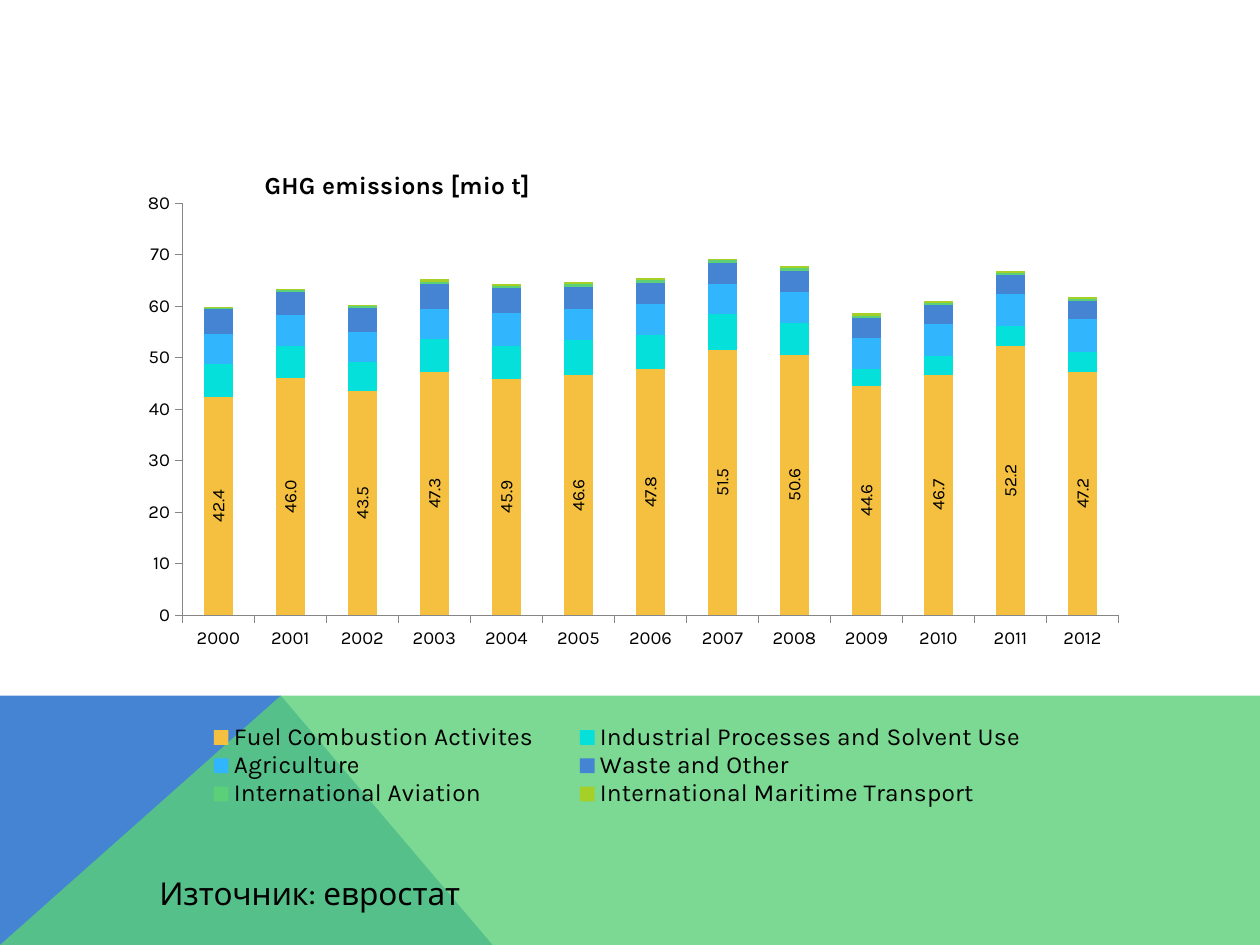
import pptx
import pptx.chart.data
import pptx.dml.color
import pptx.enum.chart
import pptx.oxml
import pptx.oxml.ns
import pptx.util
from lxml import etree

Pt = pptx.util.Pt
qn = pptx.oxml.ns.qn
FONT = "Karla"
YEARS = [str(year) for year in range(2000, 2013)]
EMISSIONS = [
    ("Fuel Combustion Activites", "F5C040",
     [42.4, 46.0, 43.5, 47.3, 45.9, 46.6, 47.8, 51.5, 50.6, 44.6, 46.7, 52.2, 47.2]),
    ("Industrial Processes and Solvent Use", "05E0DB",
     [6.3, 6.2, 5.6, 6.3, 6.3, 6.8, 6.6, 7.0, 6.1, 3.2, 3.6, 3.9, 3.9]),
    ("Agriculture", "31B6FD",
     [6.0, 6.0, 6.0, 5.8, 6.4, 6.0, 6.0, 5.8, 6.0, 6.0, 6.2, 6.2, 6.4]),
    ("Waste and Other", "4584D3",
     [4.7, 4.5, 4.5, 5.0, 5.0, 4.3, 4.1, 4.1, 4.1, 3.9, 3.7, 3.7, 3.5]),
    ("International Aviation", "5BD078",
     [0.4, 0.4, 0.4, 0.4, 0.4, 0.6, 0.6, 0.5, 0.7, 0.4, 0.5, 0.5, 0.4]),
    ("International Maritime Transport", "A5D028",
     [0.1, 0.2, 0.3, 0.4, 0.4, 0.4, 0.3, 0.3, 0.4, 0.6, 0.4, 0.3, 0.3]),
]


def color(hex_value):
    return pptx.dml.color.RGBColor.from_string(hex_value)


def style_font(font, size, bold=False):
    font.name = FONT
    font.size = Pt(size)
    font.bold = bold
    font.color.rgb = color("000000")


def add_polygon(slide, points, fill, opacity=100):
    builder = slide.shapes.build_freeform(Pt(points[0][0]), Pt(points[0][1]), scale=1.0)
    builder.add_line_segments([(Pt(x), Pt(y)) for x, y in points[1:]], close=True)
    polygon = builder.convert_to_shape()
    polygon.shadow.inherit = False
    polygon.fill.solid()
    polygon.fill.fore_color.rgb = color(fill)
    polygon.line.fill.background()
    if opacity < 100:
        fill_color = polygon.fill._xPr.find(".//" + qn("a:srgbClr"))
        etree.SubElement(fill_color, qn("a:alpha"), val=str(opacity * 1000))


def add_footer_band(slide, left, top, width, height):
    right, bottom = left + width, top + height
    peak = left + 160.5
    # Blue corner, then the translucent green slope over it
    add_polygon(slide, [(left, bottom), (left, top), (peak, top), (left + 281.5, bottom)],
                "4584D3")
    add_polygon(slide, [(left, bottom), (peak, top), (right, top), (right, bottom)],
                "5BD078", 80)


def place_part(part, x, y, width=None, height=None, inner=False):
    """Give a chart part a manual layout, as fractions of the chart."""
    for old_layout in part.findall(qn("c:layout")):
        part.remove(old_layout)
    layout = etree.Element(qn("c:layout"))
    manual = etree.SubElement(layout, qn("c:manualLayout"))
    settings = [("layoutTarget", "inner" if inner else None),
                ("xMode", "edge"), ("yMode", "edge"),
                ("x", x), ("y", y), ("w", width), ("h", height)]
    for tag, value in settings:
        if value is not None:
            etree.SubElement(manual, qn("c:" + tag), val=str(value))
    position = 0 if inner else 1
    part.insert(position, layout)


def style_axis(axis):
    style_font(axis.tick_labels.font, 10.5)
    axis.has_major_gridlines = False
    axis.major_tick_mark = pptx.enum.chart.XL_TICK_MARK.OUTSIDE
    axis.minor_tick_mark = pptx.enum.chart.XL_TICK_MARK.NONE
    axis.format.line.color.rgb = color("868686")
    axis.format.line.width = Pt(0.75)


def add_emissions_chart(slide, left, top, width, height):
    chart_data = pptx.chart.data.CategoryChartData(number_format="0.0")
    chart_data.categories = YEARS
    for name, _, values in EMISSIONS:
        chart_data.add_series(name, values)
    chart = slide.shapes.add_chart(
        pptx.enum.chart.XL_CHART_TYPE.COLUMN_STACKED,
        Pt(left), Pt(top), Pt(width), Pt(height), chart_data).chart
    style_font(chart.font, 10)

    # Stacked columns
    plot = chart.plots[0]
    plot.gap_width = 150
    plot.overlap = 100
    plot.vary_by_categories = False
    for series, (_, fill, _) in zip(plot.series, EMISSIONS):
        series.format.fill.solid()
        series.format.fill.fore_color.rgb = color(fill)
    place_part(chart._chartSpace.chart.plotArea, 0.131, 0.102, 0.832, 0.613, inner=True)

    # Upright value labels on the fuel series
    labels = plot.series[0].data_labels
    labels.show_value = True
    labels.number_format = "0.0"
    labels.number_format_is_linked = False
    labels.position = pptx.enum.chart.XL_LABEL_POSITION.CENTER
    style_font(labels.font, 10)
    label_body = labels._element.find(".//" + qn("a:bodyPr"))
    label_body.set("rot", "-5400000")
    label_body.set("vert", "horz")

    # Axes
    style_axis(chart.category_axis)
    style_axis(chart.value_axis)
    chart.value_axis.minimum_scale = 0
    chart.value_axis.maximum_scale = 80
    chart.value_axis.major_unit = 10
    chart.value_axis.tick_labels.number_format = "#,##0"
    chart.value_axis.tick_labels.number_format_is_linked = False

    # Title
    chart.has_title = True
    title = chart.chart_title
    title.text_frame.text = "GHG emissions [mio t]"
    style_font(title.text_frame.paragraphs[0].runs[0].font, 14, bold=True)
    title._element.find(qn("c:overlay")).set("val", "1")
    place_part(title._element, 0.2, 0.045)

    # Legend
    chart.has_legend = True
    chart.legend.position = pptx.enum.chart.XL_LEGEND_POSITION.BOTTOM
    chart.legend.include_in_layout = False
    style_font(chart.legend.font, 14)
    place_part(chart.legend._element, 0.125, 0.875, 0.785, 0.125)


def add_source_note(slide, left, top, width, height):
    note = slide.shapes.add_textbox(Pt(left), Pt(top), Pt(width), Pt(height))
    note.text_frame.word_wrap = True
    note.text_frame.text = "Източник: евростат"
    style_font(note.text_frame.paragraphs[0].runs[0].font, 18)


def main():
    deck = pptx.Presentation()
    deck.slide_width, deck.slide_height = Pt(720), Pt(540)
    slide = deck.slides.add_slide(deck.slide_layouts[6])
    add_footer_band(slide, 0, 397.5, 720, 142.5)
    add_emissions_chart(slide, 20, 77, 643, 385)
    add_source_note(slide, 84, 496, 556, 29)
    deck.save("out.pptx")


if __name__ == "__main__":
    main()
